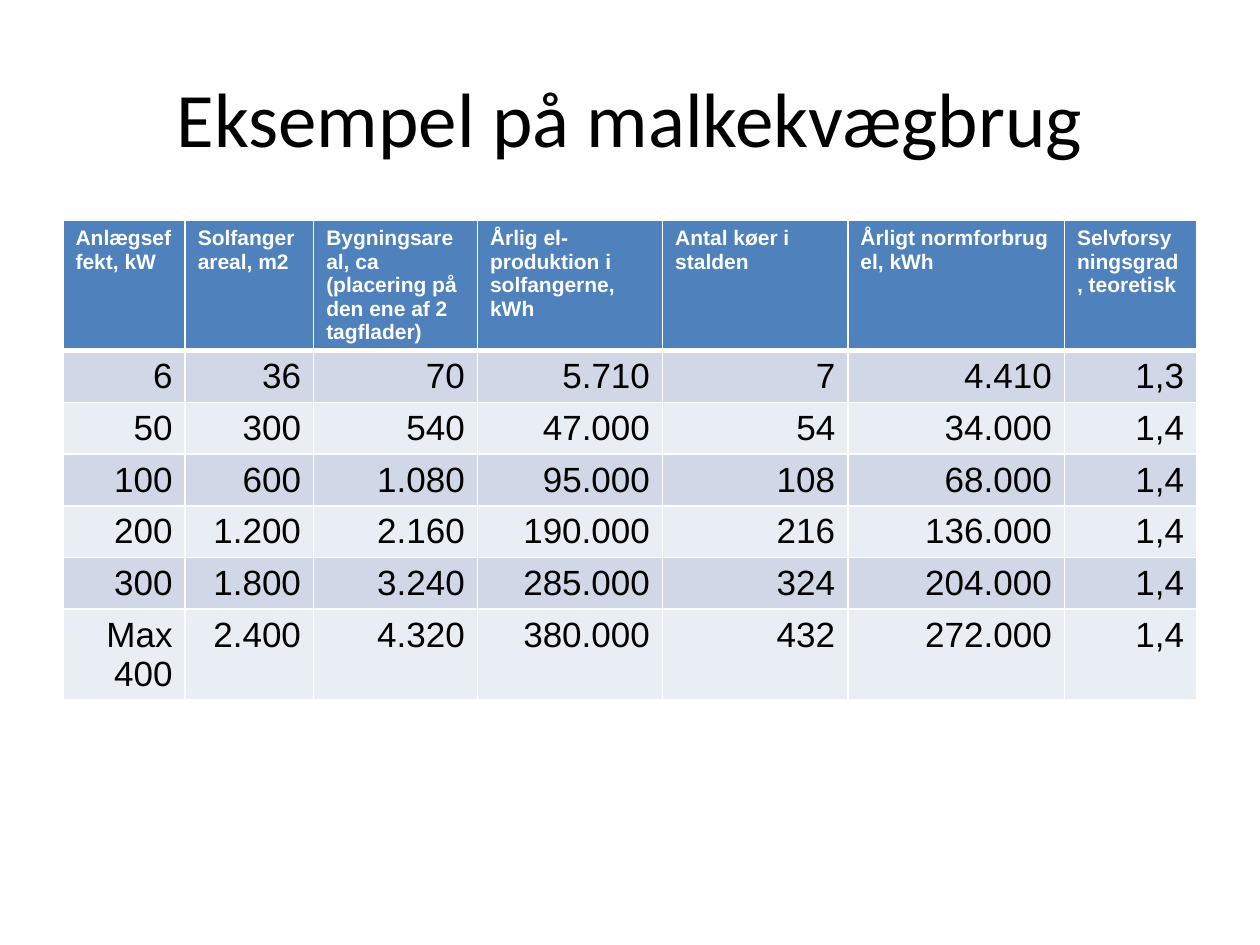
from copy import deepcopy

from lxml.etree import SubElement
from pptx import Presentation
from pptx.dml.color import RGBColor
from pptx.enum.text import MSO_ANCHOR, PP_ALIGN
from pptx.oxml.ns import qn
from pptx.util import Inches, Pt

COLORS = {
    "header": "4F81BD",
    "odd": "D0D8E8",
    "even": "E9EDF4",
    "white": "FFFFFF",
    "black": "000000",
}
HEADERS = [
    "Anlægseffekt, kW",
    "Solfangerareal, m2",
    "Bygningsareal, ca\v(placering på den ene af 2 tagflader)",
    "Årlig el-produktion i solfangerne, kWh",
    "Antal køer i stalden",
    "Årligt normforbrug el, kWh",
    "Selvforsyningsgrad, teoretisk",
]
PLANTS = [
    ["6", "36", "70", "5.710", "7", "4.410", "1,3"],
    ["50", "300", "540", "47.000", "54", "34.000", "1,4"],
    ["100", "600", "1.080", "95.000", "108", "68.000", "1,4"],
    ["200", "1.200", "2.160", "190.000", "216", "136.000", "1,4"],
    ["300", "1.800", "3.240", "285.000", "324", "204.000", "1,4"],
    ["Max 400", "2.400", "4.320", "380.000", "432", "272.000", "1,4"],
]
COLUMN_WIDTHS = [0.97, 1.02, 1.3, 1.47, 1.47, 1.72, 1.05]
ROW_HEIGHT = 0.41


class SlideBuilder:
    title_format = {"name": "Calibri", "size": Pt(44), "bold": False}
    header_format = {"name": "Arial", "size": Pt(12), "bold": True}
    body_format = {"name": "Arial", "size": Pt(20), "bold": False}

    def __init__(self, page):
        self.page = page

    def text(self, paragraph, words, style, color, align):
        paragraph.text = words
        paragraph.alignment = align
        for span in paragraph.runs:
            for name, value in style.items():
                setattr(span.font, name, value)
            span.font.color.rgb = RGBColor.from_string(COLORS[color])
        for line_break in paragraph._p.findall(qn("a:br")):
            line_break.append(deepcopy(paragraph.runs[0]._r.rPr))

    def title(self, words, left, top, width, height):
        box = self.page.shapes.title
        box.left, box.top = Inches(left), Inches(top)
        box.width, box.height = Inches(width), Inches(height)
        box.text_frame.vertical_anchor = MSO_ANCHOR.MIDDLE
        self.text(box.text_frame.paragraphs[0], words, self.title_format,
                  "black", PP_ALIGN.CENTER)

    def borders(self, cell, top, bottom):
        properties = cell._tc.get_or_add_tcPr()
        widths = {"a:lnL": 1, "a:lnR": 1, "a:lnT": top, "a:lnB": bottom}
        for position, (tag, width) in enumerate(widths.items()):
            line = SubElement(properties, qn(tag), w=str(Pt(width)))
            fill = SubElement(line, qn("a:solidFill"))
            SubElement(fill, qn("a:srgbClr"), val=COLORS["white"])
            properties.insert(position, line)

    def table(self, rows, left, top, widths, row_height):
        frame = self.page.shapes.add_table(
            len(rows), len(widths), Inches(left), Inches(top),
            Inches(sum(widths)), Inches(row_height * len(rows)))
        table = frame.table
        for column, width in zip(table.columns, widths):
            column.width = Inches(width)
        for row_index, values in enumerate(rows):
            table.rows[row_index].height = Inches(row_height)
            if row_index == 0:
                look = self.header_format, "white", PP_ALIGN.LEFT
                fill = "header"
            else:
                look = self.body_format, "black", PP_ALIGN.RIGHT
                fill = "odd" if row_index % 2 else "even"
            for column_index, words in enumerate(values):
                cell = table.cell(row_index, column_index)
                cell.fill.solid()
                cell.fill.fore_color.rgb = RGBColor.from_string(COLORS[fill])
                self.borders(cell, 3 if row_index == 1 else 1,
                             3 if row_index == 0 else 1)
                self.text(cell.text_frame.paragraphs[0], words, *look)


def main():
    deck = Presentation()
    deck.slide_width, deck.slide_height = Inches(10), Inches(7.5)
    builder = SlideBuilder(deck.slides.add_slide(deck.slide_layouts[5]))
    builder.title("Eksempel på malkekvægbrug", 0.5, 0.3, 9, 1.25)
    builder.table([HEADERS] + PLANTS, 0.5, 1.75, COLUMN_WIDTHS, ROW_HEIGHT)
    deck.save("out.pptx")


if __name__ == "__main__":
    main()
